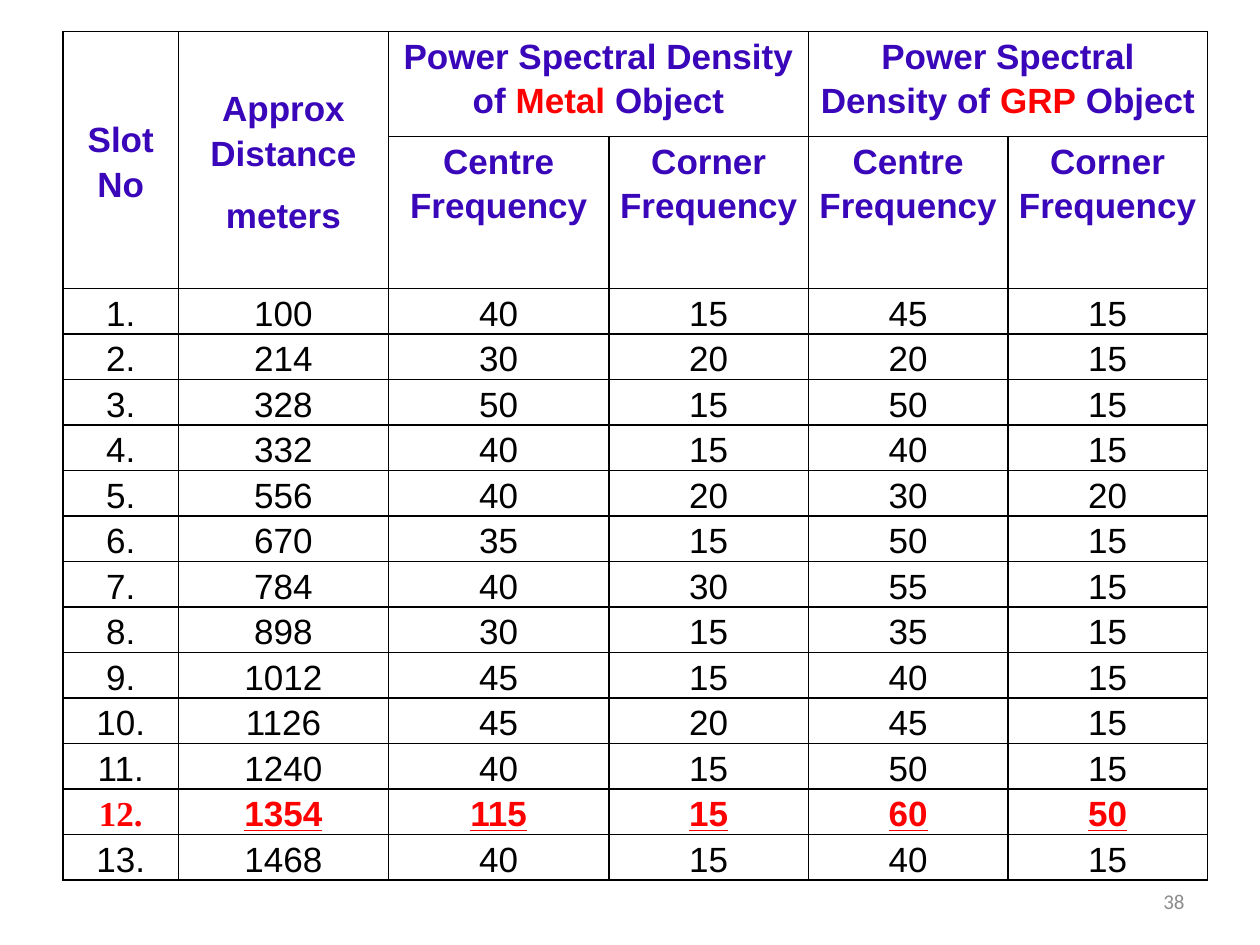
"""Build a slide with a table of power spectral density by slot."""
from lxml.etree import SubElement as Sub
from pptx import Presentation
from pptx.dml.color import RGBColor as RGB
from pptx.enum.text import MSO_ANCHOR as Anchor, PP_ALIGN as Align
from pptx.oxml.ns import qn
from pptx.util import Emu, Pt

HUES = {"head": "3906BA", "alert": "FF0000", "body": "000000", "page": "8C8C8C"}
WIDTHS = [231, 420, 441, 399, 399, 399]
TALL = [210, 244] + [91] * 13
HEADS = [
    (0, 0, 1, 0, [[("Slot No", "head")]]),
    (0, 1, 1, 1, [[("Approx Distance", "head")], [("meters", "head")]]),
    (0, 2, 0, 3, [[("Power Spectral Density of ", "head"), ("Metal ", "alert"), ("Object", "head")]]),
    (0, 4, 0, 5, [[("Power Spectral Density of ", "head"), ("GRP", "alert"), (" Object", "head")]]),
]
HEADS += [
    (1, col, 1, col, [[(name + " Frequency", "head")]])
    for col, name in enumerate(["Centre", "Corner"] * 2, 2)
]
DATA = [
    (100, 40, 15, 45, 15),
    (214, 30, 20, 20, 15),
    (328, 50, 15, 50, 15),
    (332, 40, 15, 40, 15),
    (556, 40, 20, 30, 20),
    (670, 35, 15, 50, 15),
    (784, 40, 30, 55, 15),
    (898, 30, 15, 35, 15),
    (1012, 45, 15, 40, 15),
    (1126, 45, 20, 45, 15),
    (1240, 40, 15, 50, 15),
    (1354, 115, 15, 60, 50),
    (1468, 40, 15, 40, 15),
]
PEAK = 12


def px(num):
    return Emu(round(num * 914400 / 252))


def add_run(para, text, hue, bold=False, face="Arial", size=20):
    run = para.add_run()
    run.text = text
    font = run.font
    font.name, font.size, font.bold = face, Pt(size), bold
    font.color.rgb = RGB.from_string(HUES[hue])
    return run


deck = Presentation()
deck.slide_width, deck.slide_height = px(2520), px(1890)
slide = deck.slides.add_slide(deck.slide_layouts[6])

frame = slide.shapes.add_table(len(TALL), len(WIDTHS), px(126), px(63), px(sum(WIDTHS)), px(sum(TALL)))
table = frame.table
table.first_row = table.horz_banding = False
for col, width in zip(table.columns, WIDTHS):
    col.width = px(width)
for row, height in zip(table.rows, TALL):
    row.height = px(height)
frame.height = px(1711)

page = slide.shapes.add_textbox(px(1807), px(1752), px(587), px(100)).text_frame
page.word_wrap = True
page.vertical_anchor = Anchor.MIDDLE
page.paragraphs[0].alignment = Align.RIGHT
add_run(page.paragraphs[0], "38", "page", face="Calibri", size=12)

for top, left, end, right, paras in HEADS:
    cell = table.cell(top, left)
    if (top, left) != (end, right):
        cell.merge(table.cell(end, right))
    if top < end:
        cell.vertical_anchor = Anchor.MIDDLE
    for num, runs in enumerate(paras):
        text = cell.text_frame
        para = text.add_paragraph() if num else text.paragraphs[0]
        for word, hue in runs:
            add_run(para, word, hue, bold=True)

for slot, values in enumerate(DATA, 1):
    peak = slot == PEAK
    for col, value in enumerate([f"{slot}.", *values]):
        para = table.cell(slot + 1, col).text_frame.paragraphs[0]
        face = "Times New Roman" if peak and col == 0 else "Arial"
        run = add_run(para, str(value), "alert" if peak else "body", peak, face)
        run.font.underline = peak and col > 0

for cell in table.iter_cells():
    cell.margin_left = cell.margin_right = px(18)
    cell.margin_top = cell.margin_bottom = 0
    for para in cell.text_frame.paragraphs:
        para.alignment = Align.CENTER
        para.line_spacing = 1.15
        para.space_after = Pt(10)
    props = cell._tc.get_or_add_tcPr()
    for side in ("lnL", "lnR", "lnT", "lnB"):
        line = Sub(props, qn("a:" + side), w=str(Pt(1)))
        fill = Sub(line, qn("a:solidFill"))
        Sub(fill, qn("a:srgbClr"), val=HUES["body"])
    cell.fill.background()

deck.save("out.pptx")
